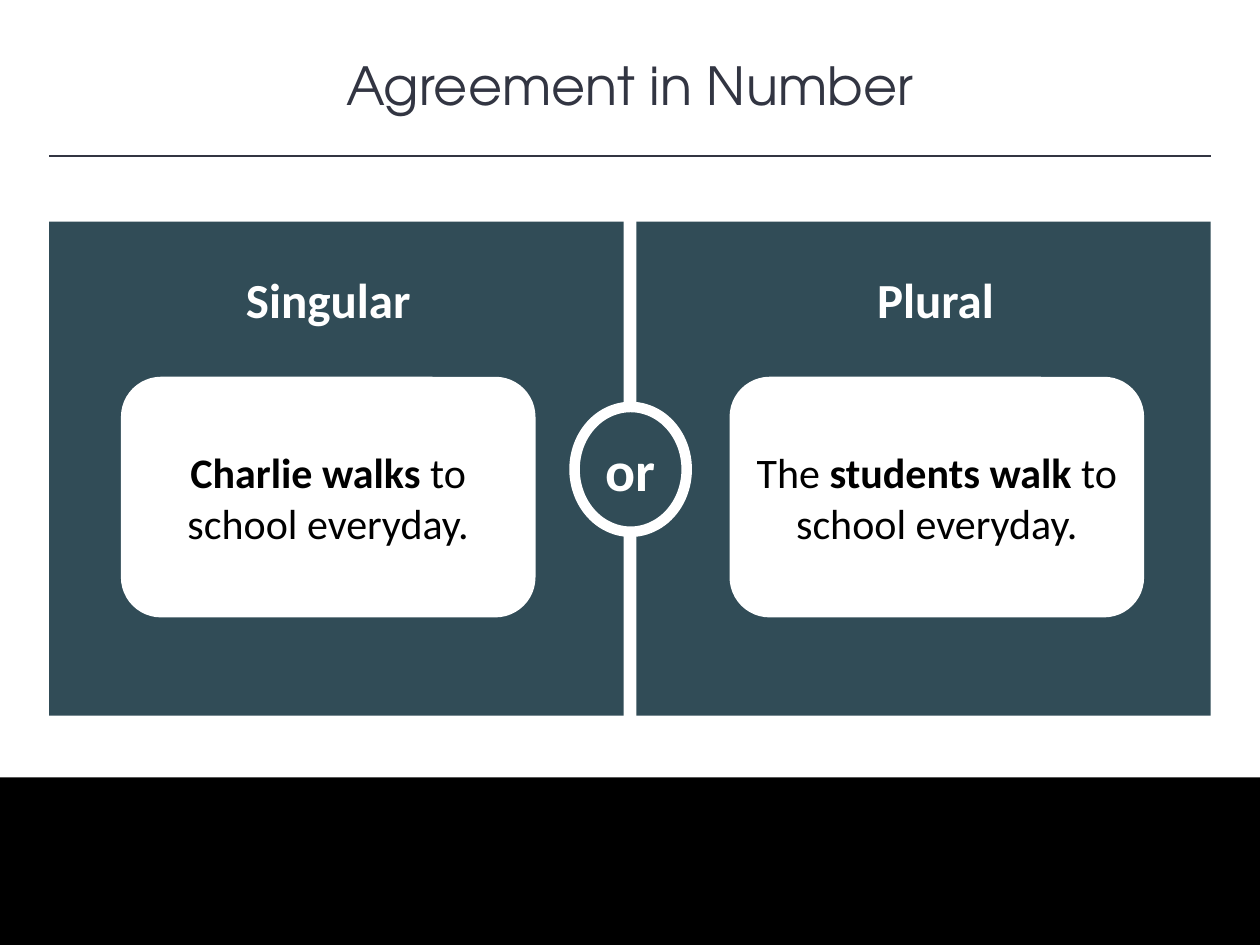
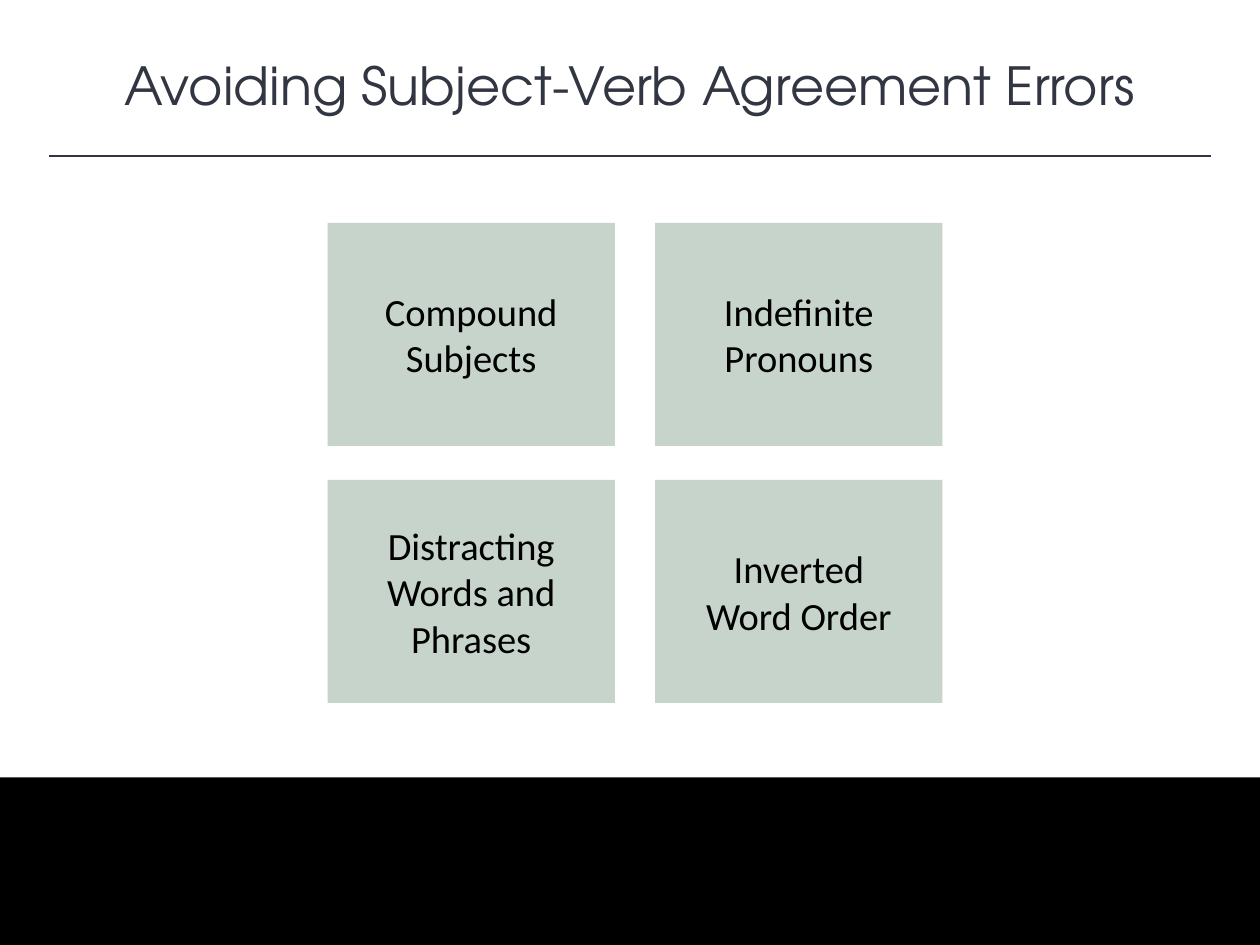
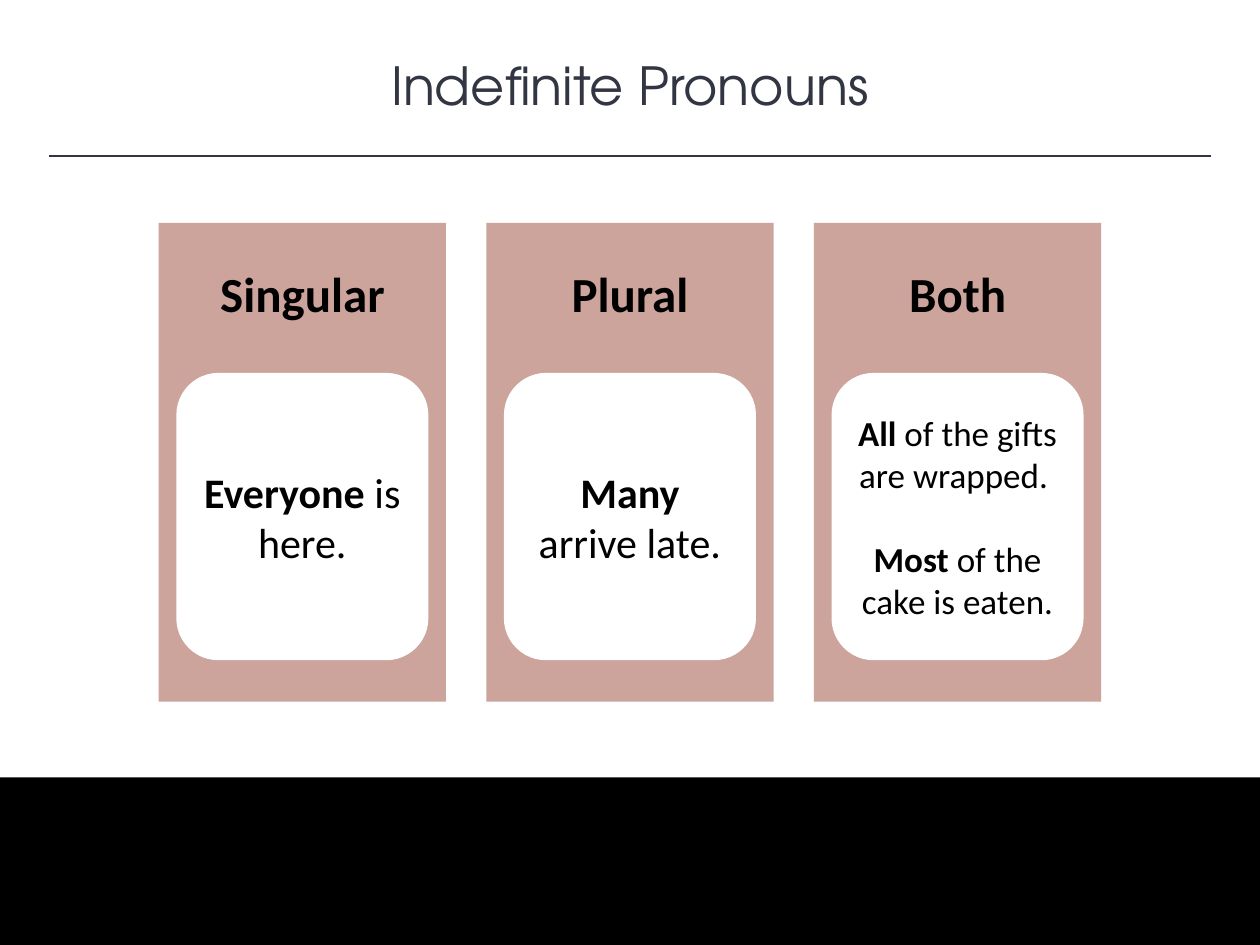
"""Build three slides on subject-verb agreement."""
import pptx
import pptx.util
import pptx.dml.color
import pptx.enum.shapes
import pptx.enum.text
import pptx.oxml.ns
import lxml.etree

Inches = pptx.util.Inches
Pt = pptx.util.Pt
SHAPES = pptx.enum.shapes.MSO_SHAPE
ANCHOR = pptx.enum.text.MSO_ANCHOR

COLORS = {
    "ink": "323542",
    "black": "000000",
    "white": "FFFFFF",
    "slate": "314C57",
    "sage": "C7D4CB",
    "rose": "CCA49C",
}
BODY_FONT = "Calibri"
TITLE_FONT = "TeX Gyre Adventor"
MARGIN = 0.39
SLIDE_WIDTH = 10


def rgb(name):
    """Return the named colour."""
    return pptx.dml.color.RGBColor.from_string(COLORS[name])


def write(shape, paragraphs, size, color="black", font=BODY_FONT, anchor=ANCHOR.MIDDLE,
          spacing=None, gap=0):
    """Fill a shape with centred paragraphs, each a list of (text, bold) spans."""
    frame = shape.text_frame
    frame.word_wrap = True
    frame.vertical_anchor = anchor
    for index, spans in enumerate(paragraphs):
        para = frame.add_paragraph() if index else frame.paragraphs[0]
        para.alignment = pptx.enum.text.PP_ALIGN.CENTER
        if spacing:
            para.line_spacing = spacing
        if index:
            para.space_before = Pt(gap)
        for text, bold in spans:
            span = para.add_run()
            span.text = text
            span.font.name = font
            span.font.size = Pt(size)
            span.font.bold = bold
            span.font.color.rgb = rgb(color)


def add_block(page, left, top, width, height, fill, kind=SHAPES.RECTANGLE):
    """Add a flat filled shape without an outline."""
    block = page.shapes.add_shape(kind, Inches(left), Inches(top), Inches(width), Inches(height))
    block.shadow.inherit = False
    block.fill.solid()
    block.fill.fore_color.rgb = rgb(fill)
    block.line.fill.background()
    return block


def add_label(page, left, top, width, height, fill, text, size, color="black", bold=True,
              spacing=None):
    """Add a one-style label on a block of its panel's colour."""
    label = add_block(page, left, top, width, height, fill)
    write(label, [[(text, bold)]], size, color, spacing=spacing)


def add_card(page, left, top, width, height, paragraphs, size=24, gap=0):
    """Add a white rounded card with an example sentence."""
    card = add_block(page, left, top, width, height, "white", SHAPES.ROUNDED_RECTANGLE)
    write(card, paragraphs, size, gap=gap)


def add_page(deck, title):
    """Add a blank slide with the shared title, rule and bottom band."""
    page = deck.slides.add_slide(deck.slide_layouts[6])
    box = page.shapes.add_textbox(0, Inches(0.37), Inches(SLIDE_WIDTH), Inches(0.61))
    write(box, [[(title, False)]], 30, "ink", TITLE_FONT, ANCHOR.TOP)
    add_block(page, 0, 6.17, SLIDE_WIDTH, 1.33, "black")
    rule = page.shapes.add_connector(
        pptx.enum.shapes.MSO_CONNECTOR.STRAIGHT,
        Inches(MARGIN), Inches(1.24), Inches(SLIDE_WIDTH - MARGIN), Inches(1.24))
    rule.line.color.rgb = rgb("ink")
    rule.line.width = Pt(1)
    lxml.etree.SubElement(rule._element.spPr, pptx.oxml.ns.qn("a:effectLst"))
    return page


def build_number(deck):
    """Compare singular and plural in two panels joined by a badge."""
    page = add_page(deck, "Agreement in Number")
    sides = [
        ("Singular", [("Charlie walks ", True), ("to school everyday.", False)]),
        ("Plural", [("The ", False), ("students walk ", True), ("to school everyday.", False)]),
    ]
    for column, (heading, sentence) in enumerate(sides):
        add_block(page, MARGIN + 4.66 * column, 1.76, 4.56, 3.92, "slate")
        add_label(page, 0.79 + 4.82 * column, 2.09, 3.63, 0.57, "slate", heading, 28, "white")
        add_card(page, 0.96 + 4.83 * column, 2.99, 3.29, 1.91, [sentence])
    badge = add_block(page, 4.56, 3.23, 0.89, 0.99, "slate", SHAPES.OVAL)
    badge.line.color.rgb = rgb("white")
    badge.line.width = Pt(6)
    write(badge, [[("or", True)]], 32, "white")


def build_errors(deck):
    """Show the four sources of error in a two by two grid."""
    page = add_page(deck, "Avoiding Subject-Verb Agreement Errors")
    topics = [
        ("Compound Subjects", 0.84),
        ("Indefinite Pronouns", 0.84),
        ("Distracting Words and Phrases", 1.21),
        ("Inverted Word Order", 0.84),
    ]
    width, height, label_width = 2.28, 1.77, 1.82
    for index, (topic, label_height) in enumerate(topics):
        row, column = divmod(index, 2)
        left, top = 2.6 + 2.6 * column, 1.77 + 2.04 * row
        add_block(page, left, top, width, height, "sage")
        add_label(page, left + (width - label_width) / 2, top + (height - label_height) / 2,
                  label_width, label_height, "sage", topic, 22, bold=False)


def build_pronouns(deck):
    """Show the three groups of indefinite pronouns in columns."""
    page = add_page(deck, "Indefinite Pronouns")
    groups = [
        ("Singular", [[("Everyone ", True), ("is here.", False)]], 24),
        ("Plural", [[("Many ", True), ("arrive late.", False)]], 24),
        ("Both", [[("All ", True), ("of the gifts are wrapped. ", False)],
                  [("Most ", True), ("of the cake is eaten.", False)]], 20),
    ]
    for column, (heading, sentences, size) in enumerate(groups):
        left = 1.26 + 2.6 * column
        add_block(page, left, 1.77, 2.28, 3.8, "rose")
        add_label(page, left + 0.23, 1.8, 1.82, 0.81, "rose", heading, 28, spacing=1.5)
        add_card(page, left + 0.14, 2.96, 2, 2.28, sentences, size, gap=24.4)


def main():
    """Build and save the deck."""
    deck = pptx.Presentation()
    deck.slide_width = Inches(SLIDE_WIDTH)
    deck.slide_height = Inches(7.5)
    build_number(deck)
    build_errors(deck)
    build_pronouns(deck)
    deck.save("out.pptx")


if __name__ == "__main__":
    main()
